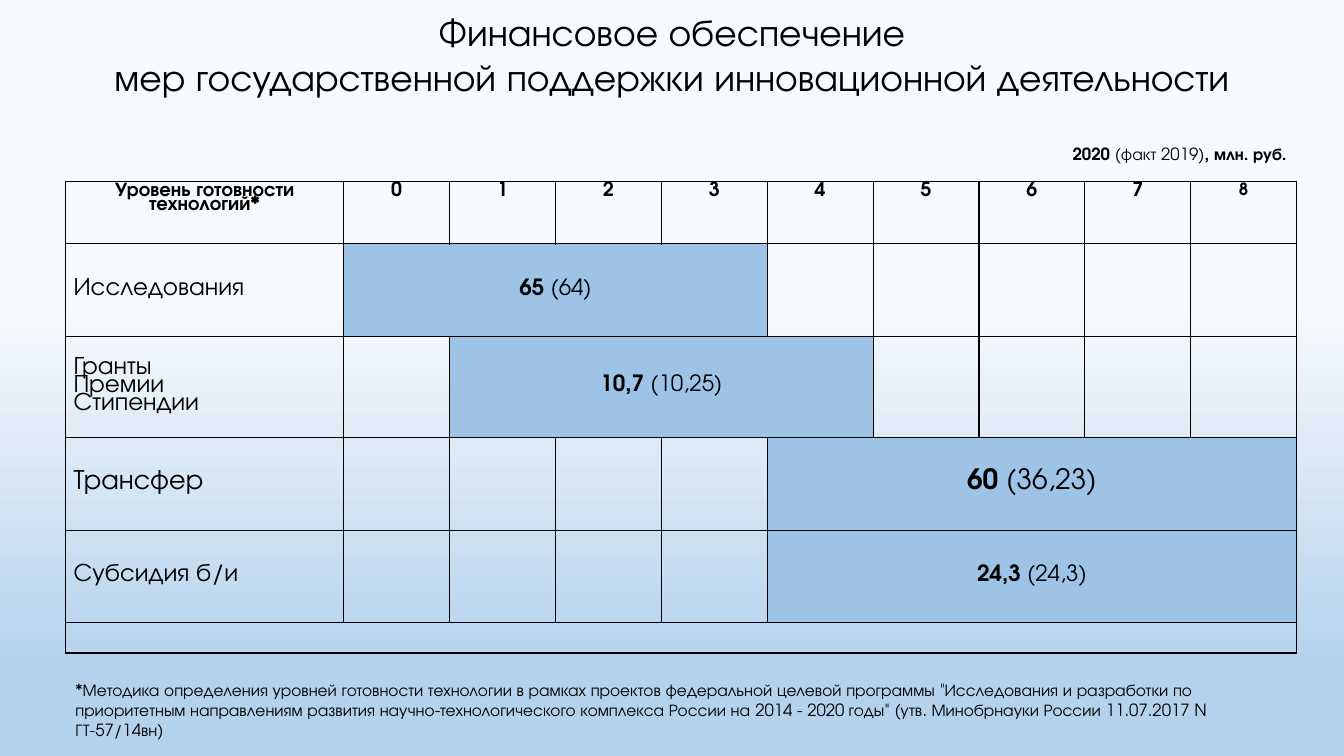
from lxml.etree import SubElement
from pptx import Presentation
from pptx.dml.color import RGBColor
from pptx.enum.text import MSO_ANCHOR, PP_ALIGN
from pptx.oxml.ns import qn
from pptx.util import Inches, Pt

# Content: text is a list of paragraphs, each a list of (text, bold) runs
TITLE = [[("Финансовое обеспечение\v"
           "мер государственной поддержки инновационной деятельности", False)]]
UNITS = [[("2020", True), (" (факт 2019)", False), (", млн. руб.", True)]]
FOOTNOTE = [[("*Методика определения уровней готовности технологии в рамках проектов "
              "федеральной целевой программы \"Исследования и разработки по приоритетным "
              "направлениям развития научно-технологического комплекса России на "
              "2014 - 2020 годы\" (утв. Минобрнауки России 11.07.2017 N ГТ-57/14вн)", False)]]
HEADING = "Уровень готовности технологий*"
LEVELS = range(9)
# label lines, label size, first level, last level, plan 2020, fact 2019, value size
MEASURES = [
    (["Исследования"], 18, 0, 3, "65", "64", 16),
    (["Гранты", "Премии", "Стипендии"], 18, 1, 4, "10,7", "10,25", 16),
    (["Трансфер"], 20, 4, 8, "60", "36,23", 20),
    (["Субсидия б/и"], 18, 4, 8, "24,3", "24,3", 16),
]

# Format
FONT = "TeX Gyre Adventor"
COLORS = {"text": "000000", "border": "000000", "band": "9DC3E6",
          "sky_top": "F7FAFD", "sky_bottom": "B5D2EC"}
LEFT, TABLE_TOP = 0.65, 1.8
LABEL_WIDTH, LEVEL_WIDTH = 2.76, 1.05
ROW_HEIGHTS = [0.62, 0.92, 1, 0.92, 0.92, 0.3]
TABLE_WIDTH = LABEL_WIDTH + LEVEL_WIDTH * len(LEVELS)
CELL_SPACING = 0.77
CELL_FORMAT = {"margin_left": Inches(0.08), "margin_right": Inches(0.08),
               "margin_top": Inches(0.04), "margin_bottom": Inches(0.04)}
TABLE_FORMAT = {"first_row": False, "horz_banding": False}


def apply(target, values):
    for name, value in values.items():
        setattr(target, name, value)


def color(name):
    return RGBColor.from_string(COLORS[name])


def write(frame, paragraphs, size, align=PP_ALIGN.LEFT, spacing=None):
    for index, runs in enumerate(paragraphs):
        paragraph = frame.add_paragraph() if index else frame.paragraphs[0]
        apply(paragraph, {"alignment": align, "line_spacing": spacing})
        for text, bold in runs:
            for part, line in enumerate(text.split("\v")):
                if part:
                    paragraph.add_line_break()
                run = paragraph.add_run()
                run.text = line
                apply(run.font, {"name": FONT, "size": Pt(size), "bold": bold})
                run.font.color.rgb = color("text")


def add_text(box, paragraphs, size, align=PP_ALIGN.LEFT, **frame_format):
    frame = slide.shapes.add_textbox(*map(Inches, box)).text_frame
    apply(frame, {"word_wrap": True, **frame_format})
    write(frame, paragraphs, size, align)


def style_cell(cell):
    apply(cell, CELL_FORMAT)
    properties = cell._tc.get_or_add_tcPr()
    for side in ("lnL", "lnR", "lnT", "lnB"):
        line = SubElement(properties, qn(f"a:{side}"), w=str(Pt(1)))
        fill = SubElement(line, qn("a:solidFill"))
        SubElement(fill, qn("a:srgbClr"), val=COLORS["border"])
    cell.fill.background()
    # Small empty paragraphs keep the last row low
    SubElement(cell.text_frame.paragraphs[0]._p, qn("a:endParaRPr"), sz="1000")


prs = Presentation()
apply(prs, {"slide_width": Inches(13.33), "slide_height": Inches(7.5)})
slide = prs.slides.add_slide(prs.slide_layouts[6])

# Background
sky = slide.background.fill
sky.gradient()
sky.gradient_angle = 270
for stop, position, name in zip(sky.gradient_stops, (0.4, 0.88), ("sky_top", "sky_bottom")):
    stop.position = position
    stop.color.rgb = color(name)

# Title and units
add_text((0, -0.12, 13.33, 1.31), TITLE, 27, PP_ALIGN.CENTER,
         vertical_anchor=MSO_ANCHOR.MIDDLE, margin_top=Inches(0.2), margin_bottom=Inches(0.2))
add_text((10.22, 1.38, 2.64, 0.3), UNITS, 12, PP_ALIGN.RIGHT)

# Table grid
table = slide.shapes.add_table(
    len(ROW_HEIGHTS), 1 + len(LEVELS), Inches(LEFT), Inches(TABLE_TOP),
    Inches(TABLE_WIDTH), Inches(sum(ROW_HEIGHTS))).table
apply(table, TABLE_FORMAT)
for index, column in enumerate(table.columns):
    column.width = Inches(LEVEL_WIDTH if index else LABEL_WIDTH)
for row, height in zip(table.rows, ROW_HEIGHTS):
    row.height = Inches(height)
for cell in table.iter_cells():
    style_cell(cell)

# Table header
for column, heading in enumerate([HEADING, *map(str, LEVELS)]):
    size = 12 if column == len(LEVELS) else 14
    write(table.cell(0, column).text_frame, [[(heading, True)]], size,
          PP_ALIGN.CENTER, CELL_SPACING)

# Support measures and the levels they span
for row, (lines, label_size, first, last, plan, fact, size) in enumerate(MEASURES, 1):
    label, band = table.cell(row, 0), table.cell(row, first + 1)
    band.merge(table.cell(row, last + 1))
    band.fill.solid()
    band.fill.fore_color.rgb = color("band")
    label.vertical_anchor = band.vertical_anchor = MSO_ANCHOR.MIDDLE
    write(label.text_frame, [[(line, False)] for line in lines], label_size,
          spacing=CELL_SPACING)
    write(band.text_frame, [[(plan, True), (f" ({fact})", False)]], size,
          PP_ALIGN.CENTER, CELL_SPACING)

# Closing row and footnote
closing = len(ROW_HEIGHTS) - 1
table.cell(closing, 0).merge(table.cell(closing, len(LEVELS)))
add_text((LEFT, 6.69, 11.78, 0.71), FOOTNOTE, 12)

prs.save("out.pptx")
